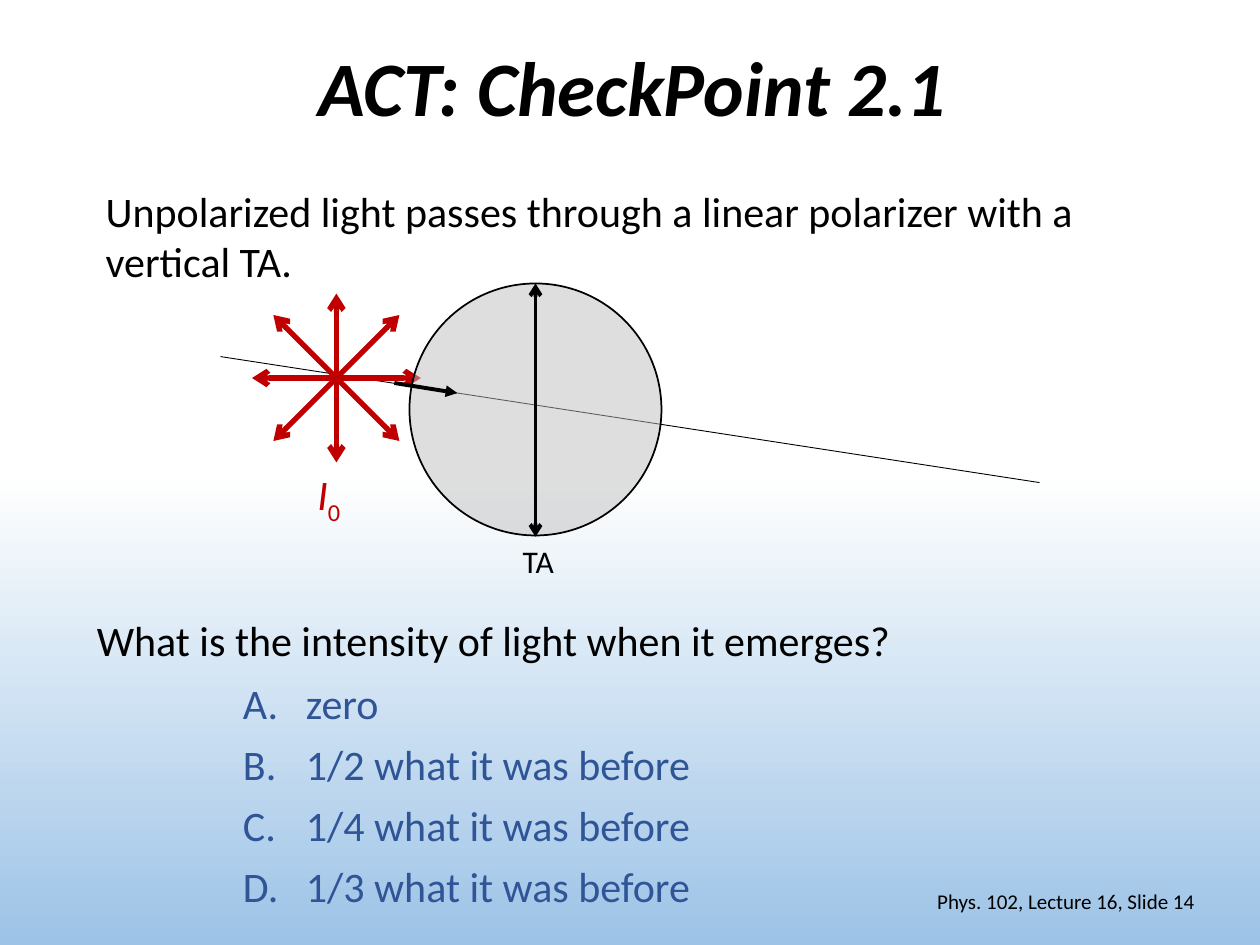
from pptx import Presentation
from pptx.dml.color import RGBColor
from pptx.enum.shapes import MSO_CONNECTOR, MSO_SHAPE
from pptx.enum.text import MSO_ANCHOR, PP_ALIGN
from pptx.oxml.ns import qn
from pptx.util import Inches, Pt
from lxml.etree import SubElement

BLACK, RED, BLUE = "000000", "C00000", "2F5597"


def color(value):
    """Turn a hex string into a colour."""
    return RGBColor.from_string(value)


def set_background(page):
    """Fade the page from white at the middle to blue at the bottom."""
    fill = page.background.fill
    fill.gradient()
    fill.gradient_angle = 270
    for stop, position, value in zip(fill.gradient_stops, (0.5, 1), ("FFFFFF", "9DC3E6")):
        stop.position = position
        stop.color.rgb = color(value)


def add_box(page, left, top, width, height, anchor=MSO_ANCHOR.TOP, wrap=True):
    """Add an empty text box and return its text frame."""
    frame = page.shapes.add_textbox(*map(Inches, (left, top, width, height))).text_frame
    frame.word_wrap = wrap
    frame.vertical_anchor = anchor
    return frame


def add_span(para, text, size=24, value=BLACK, bold=False, italic=False):
    """Add a formatted run to a paragraph."""
    span = para.add_run()
    span.text = text
    font = span.font
    font.name, font.size, font.bold, font.italic = "Calibri", Pt(size), bold, italic
    font.color.rgb = color(value)
    return span


def add_label(page, text, left, top, width, height, size=24, wrap=True):
    """Add a plain one-run text."""
    add_span(add_box(page, left, top, width, height, wrap=wrap).paragraphs[0], text, size)


def add_title(page, text):
    """Add the centred bold italic heading."""
    para = add_box(page, 0.71, 0, 8.62, 1.45, MSO_ANCHOR.MIDDLE).paragraphs[0]
    para.alignment = PP_ALIGN.CENTER
    para.line_spacing = 0.9
    add_span(para, text, 44, bold=True, italic=True)


def add_footer(page, text):
    """Add the right-aligned slide reference."""
    para = add_box(page, 7.06, 6.95, 2.52, 0.4, MSO_ANCHOR.MIDDLE).paragraphs[0]
    para.alignment = PP_ALIGN.RIGHT
    add_span(para, text, 12)


def add_answers(page, answers):
    """Add the lettered list of answers."""
    frame = add_box(page, 1.83, 5.33, 4.89, 1.97)
    for index, answer in enumerate(answers):
        para = frame.add_paragraph() if index else frame.paragraphs[0]
        para.space_after = Pt(6)
        properties = para._p.get_or_add_pPr()
        properties.set("marL", str(Inches(0.5)))
        properties.set("indent", str(-Inches(0.5)))
        SubElement(properties, qn("a:buFont"), typeface="+mj-lt")
        SubElement(properties, qn("a:buAutoNum"), type="alphaUcPeriod")
        add_span(para, answer, value=BLUE)


def add_intensity(page):
    """Label the incoming light with its symbol and subscript."""
    para = add_box(page, 2.42, 3.67, 0.4, 0.5, wrap=False).paragraphs[0]
    add_span(para, "I", value=RED, italic=True)
    add_span(para, "0", value=RED).font._element.set("baseline", "-25000")


def add_line(page, start, end, width, value=BLACK, head=None, tail=None):
    """Draw a straight line with optional arrowheads."""
    line = page.shapes.add_connector(MSO_CONNECTOR.STRAIGHT, *map(Inches, (*start, *end)))
    line.line.width = Pt(width)
    line.line.color.rgb = color(value)
    outline = line.line._get_or_add_ln()
    for tag, kind in (("a:headEnd", head), ("a:tailEnd", tail)):
        if kind:
            SubElement(outline, qn(tag), type=kind)
    SubElement(line._element.spPr, qn("a:effectLst"))


def add_unpolarized_light(page):
    """Draw the star of double arrows."""
    x, y = 2.67, 3
    for dx, dy in ((0, -0.67), (0.67, 0), (0.5, 0.5), (0.5, -0.5)):
        add_line(page, (x - dx, y - dy), (x + dx, y + dy), 3, RED, "arrow", "arrow")


def add_polarizer(page):
    """Draw the translucent disc with its vertical axis."""
    disc = page.shapes.add_shape(MSO_SHAPE.OVAL, *map(Inches, (3.25, 2.25, 2, 2)))
    disc.shadow.inherit = False
    disc.fill.solid()
    disc.fill.fore_color.rgb = color("BFBFBF")
    SubElement(disc.fill._xPr.find(qn("a:solidFill"))[0], qn("a:alpha"), val="50000")
    disc.line.color.rgb = color(BLACK)
    disc.line.width = Pt(1)
    add_line(page, (4.25, 2.25), (4.25, 4.26), 2.25, head="arrow", tail="arrow")


def main():
    """Build and save the slide."""
    deck = Presentation()
    deck.slide_width, deck.slide_height = Inches(10), Inches(7.5)
    page = deck.slides.add_slide(deck.slide_layouts[6])
    set_background(page)
    add_line(page, (1.75, 2.83), (8.25, 3.83), 0.5)
    add_title(page, "ACT: CheckPoint 2.1")
    add_label(page, "Unpolarized light passes through a linear polarizer with a vertical TA.",
              0.74, 1.42, 8.07, 0.91)
    add_label(page, "What is the intensity of light when it emerges?", 0.67, 4.83, 6.75, 0.5)
    add_answers(page, ["zero"] + [f"{part} what it was before" for part in ("1/2", "1/4", "1/3")])
    add_intensity(page)
    add_label(page, "TA", 4.05, 4.25, 0.45, 0.4, 18, wrap=False)
    add_unpolarized_light(page)
    add_footer(page, "Phys. 102, Lecture 16, Slide 14")
    add_polarizer(page)
    add_line(page, (3.13, 3.04), (3.63, 3.12), 2.25, tail="triangle")
    deck.save("out.pptx")


if __name__ == "__main__":
    main()
